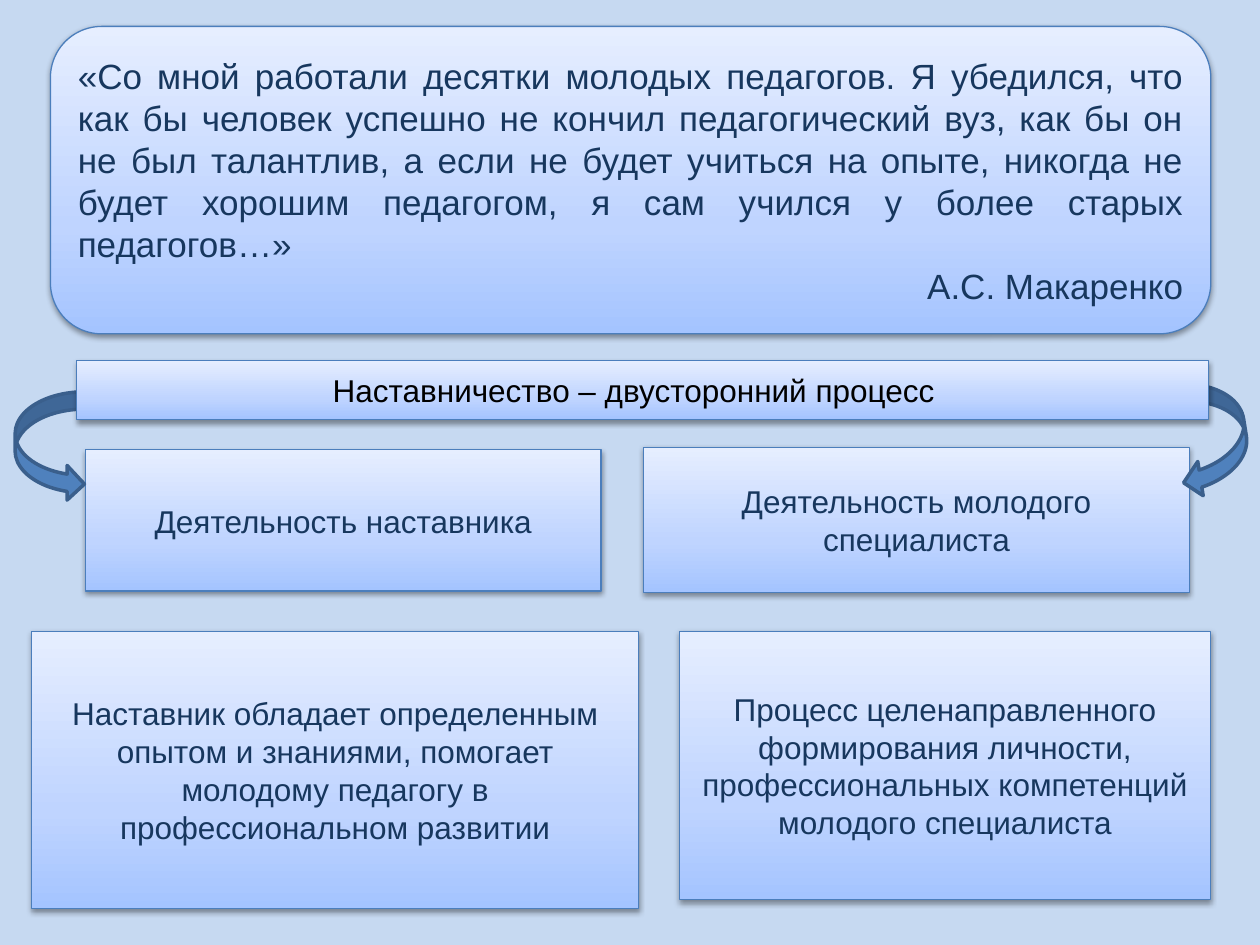
from copy import deepcopy

from lxml import etree
from pptx import Presentation
from pptx import util as u
from pptx.dml.color import RGBColor
from pptx.enum import shapes, text
from pptx.oxml import ns

BACKGROUND = RGBColor(0xC6, 0xD9, 0xF1)
NAVY = RGBColor(0x17, 0x37, 0x5E)
BLACK = RGBColor(0, 0, 0)
PANEL_LINE = RGBColor(0x4B, 0x7E, 0xBC)
ARROW_FILL = RGBColor(0x4F, 0x81, 0xBD)
ARROW_LINE = RGBColor(0x3A, 0x5F, 0x8C)
GRADIENT = (
    (0, RGBColor(0xA4, 0xC4, 0xFF)),
    (0.35, RGBColor(0xBF, 0xD4, 0xFF)),
    (1, RGBColor(0xE6, 0xEE, 0xFF)),
)
QUOTE = (
    "«Со мной работали десятки молодых педагогов. Я убедился, что как бы "
    "человек успешно не кончил педагогический вуз, как бы он не был талантлив, "
    "а если не будет учиться на опыте, никогда не будет хорошим педагогом, "
    "я сам учился у более старых педагогов…»"
)
MENTOR_ROLE = (
    "Наставник обладает определенным опытом и знаниями, помогает молодому "
    "педагогу в профессиональном развитии"
)
SPECIALIST_ROLE = (
    "Процесс целенаправленного формирования личности, профессиональных "
    "компетенций молодого специалиста"
)


class MentoringSlide:
    """Hold the slide's style and draw its panels and arrows."""

    font = "Arial"

    def __init__(self, presentation):
        self.slide = presentation.slides.add_slide(presentation.slide_layouts[6])
        self.slide.background.fill.solid()
        self.slide.background.fill.fore_color.rgb = BACKGROUND

    def add_shape(self, kind, box, line_color, line_width):
        shape = self.slide.shapes.add_shape(kind, *map(u.Inches, box))
        shape.shadow.inherit = False
        shape.line.color.rgb = line_color
        shape.line.width = u.Pt(line_width)
        return shape

    def apply_gradient(self, shape):
        shape.fill.gradient()
        shape.fill.gradient_angle = 90
        stop_list = next(shape.element.spPr.iter(ns.qn("a:gsLst")))
        stop_list.append(deepcopy(stop_list[-1]))
        for stop, (position, color) in zip(shape.fill.gradient_stops, GRADIENT):
            stop.position = position
            stop.color.rgb = color

    def apply_shadow(self, shape):
        effects = shape.element.spPr.find(ns.qn("a:effectLst"))
        shadow = etree.SubElement(
            effects, ns.qn("a:outerShdw"), blurRad="40000", dist="20000",
            dir="5400000", rotWithShape="0")
        color = etree.SubElement(shadow, ns.qn("a:srgbClr"), val="000000")
        etree.SubElement(color, ns.qn("a:alpha"), val="38000")

    def add_panel(self, box, content, kind=shapes.MSO_SHAPE.RECTANGLE, size=18,
                  color=NAVY, alignments=(text.PP_ALIGN.CENTER,)):
        shape = self.add_shape(kind, box, PANEL_LINE, 0.75)
        self.apply_gradient(shape)
        self.apply_shadow(shape)
        frame = shape.text_frame
        frame.text = content
        frame.word_wrap = True
        frame.vertical_anchor = text.MSO_ANCHOR.MIDDLE
        for paragraph, alignment in zip(frame.paragraphs, alignments):
            paragraph.alignment = alignment
            for run in paragraph.runs:
                run.font.name = self.font
                run.font.size = u.Pt(size)
                run.font.color.rgb = color
        return shape

    def add_arrow(self, kind, box, rotation=0):
        shape = self.add_shape(kind, box, ARROW_LINE, 2)
        shape.fill.solid()
        shape.fill.fore_color.rgb = ARROW_FILL
        shape.rotation = rotation


def main():
    presentation = Presentation()
    presentation.slide_width = u.Inches(10)
    presentation.slide_height = u.Inches(7.5)
    slide = MentoringSlide(presentation)

    slide.add_panel(
        (0.4, 0.21, 9.21, 2.44), f"{QUOTE}\nА.С. Макаренко",
        kind=shapes.MSO_SHAPE.ROUNDED_RECTANGLE, size=20,
        alignments=(text.PP_ALIGN.JUSTIFY, text.PP_ALIGN.RIGHT))
    slide.add_panel((0.68, 3.57, 4.09, 1.12), "Деятельность наставника")
    slide.add_panel((5.11, 3.55, 4.33, 1.15), "Деятельность молодого специалиста")
    slide.add_arrow(shapes.MSO_SHAPE.CURVED_RIGHT_ARROW, (0.12, 3.11, 0.55, 0.87))
    slide.add_arrow(shapes.MSO_SHAPE.CURVED_LEFT_ARROW, (9.34, 3.01, 0.55, 0.92), 351)
    banner = slide.add_panel(
        (0.61, 2.86, 8.98, 0.47), "Наставничество – двусторонний процесс", color=BLACK)
    banner.text_frame.margin_right = u.Inches(0.24)
    slide.add_panel((5.39, 5.01, 4.22, 2.13), SPECIALIST_ROLE)
    slide.add_panel((0.25, 5.01, 4.82, 2.2), MENTOR_ROLE)

    presentation.save("out.pptx")


if __name__ == "__main__":
    main()
